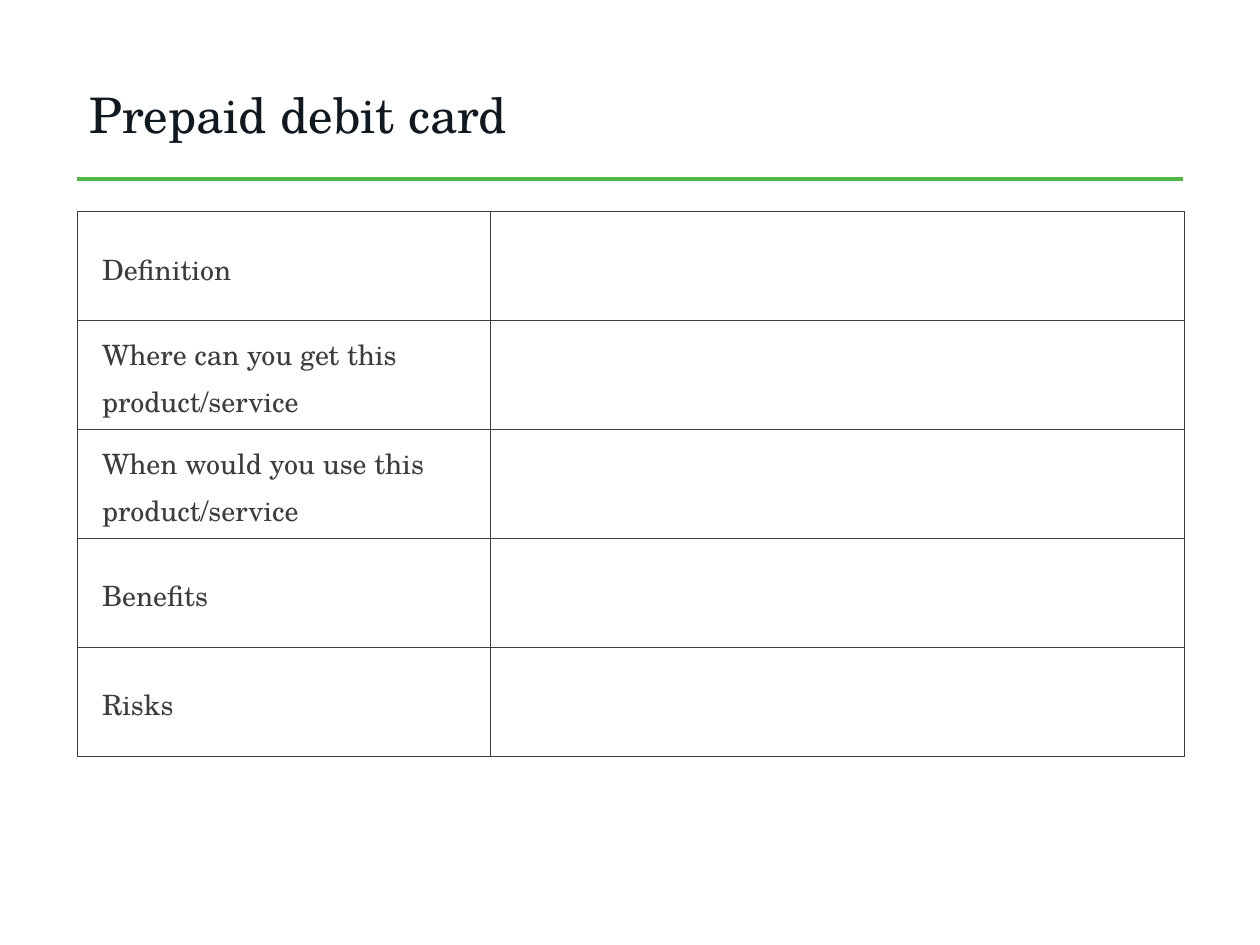
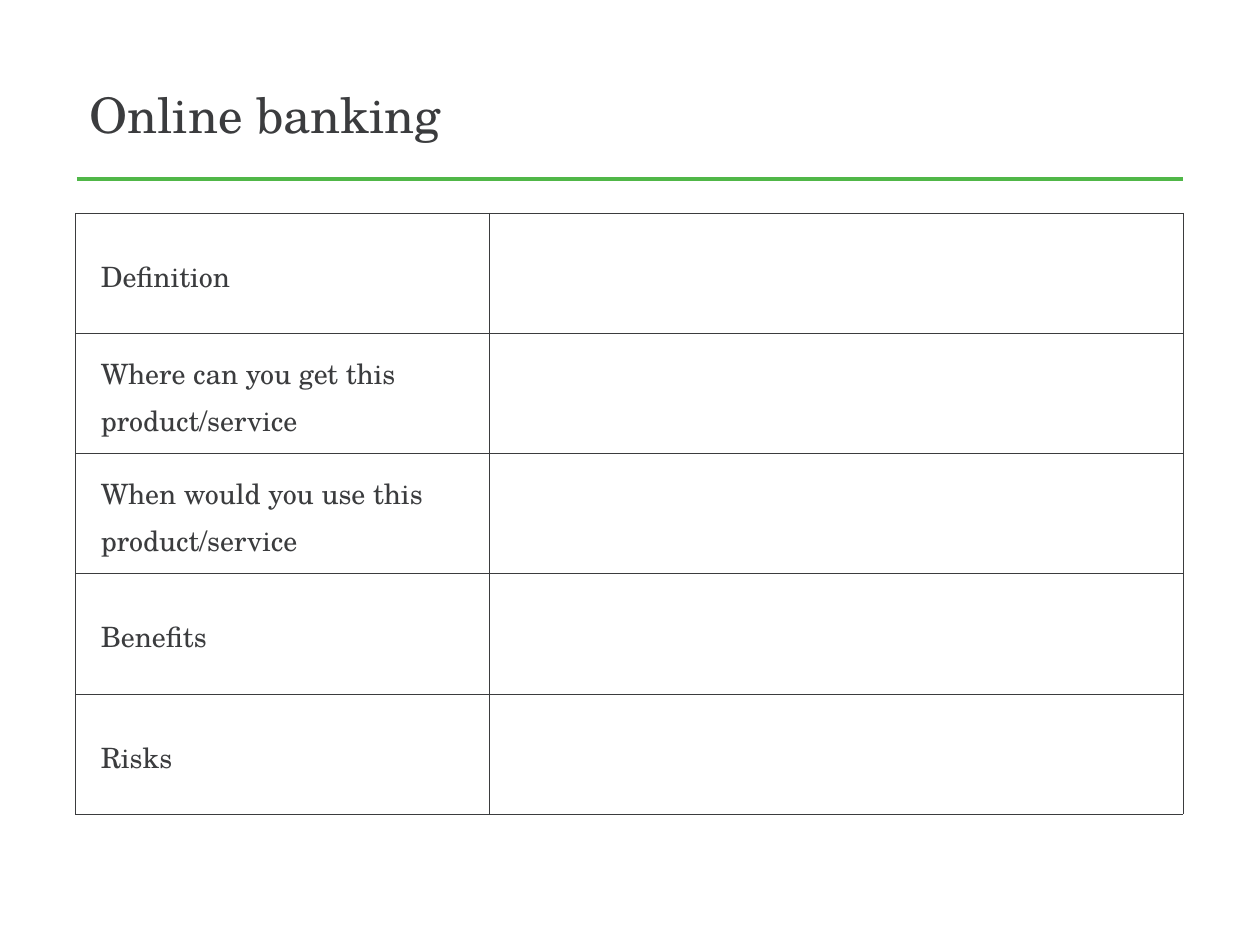
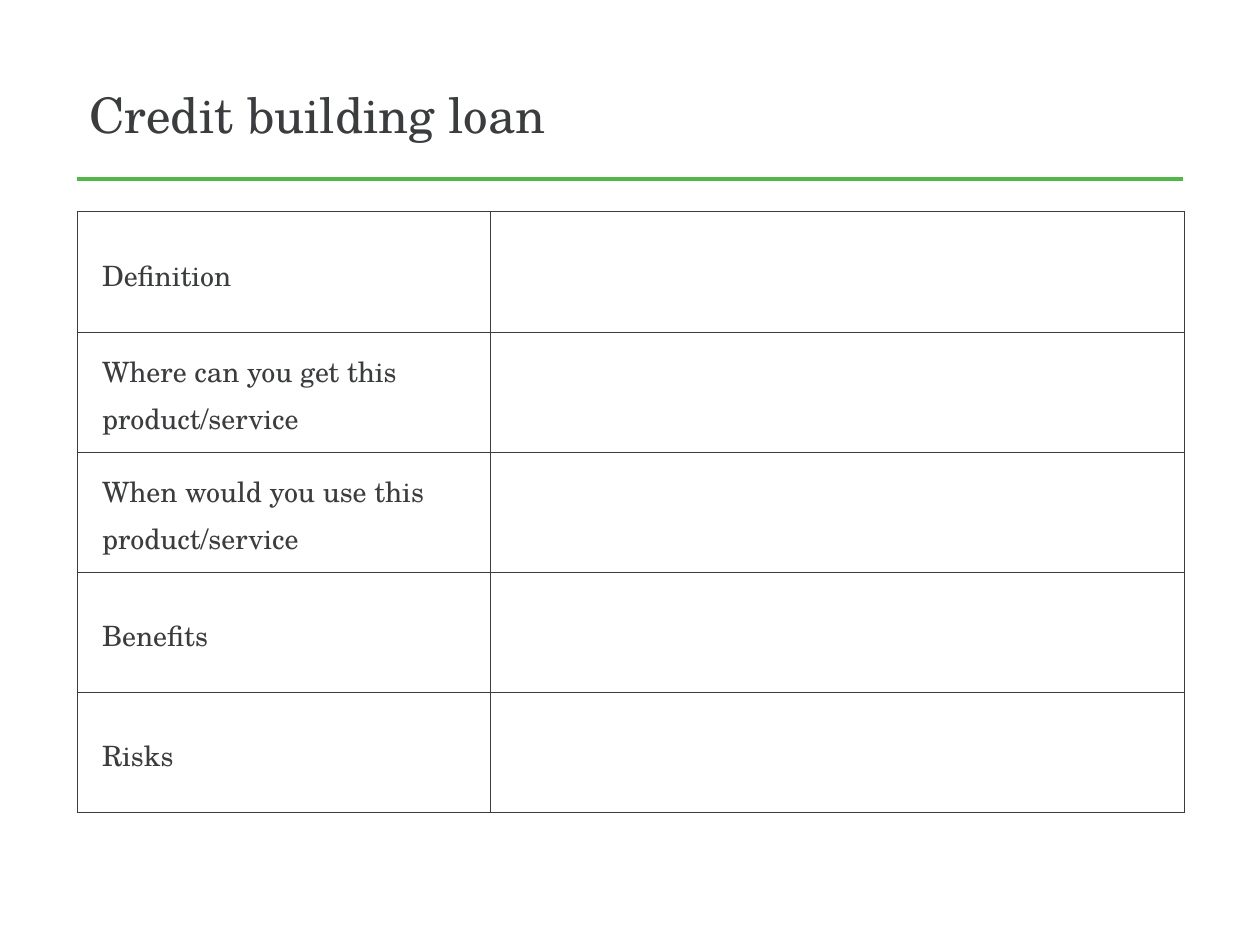
from lxml.etree import SubElement
from pptx import Presentation
from pptx.dml.color import RGBColor
from pptx.enum.shapes import MSO_CONNECTOR
from pptx.enum.text import MSO_ANCHOR, MSO_AUTO_SIZE, PP_ALIGN
from pptx.oxml.ns import qn
from pptx.util import Inches, Pt

COLORS = {"ink": "3B3C3E", "navy": "101820", "green": "50B748"}
FONT = "TeX Gyre Schola"
LEFT, WIDTH = 0.61, 8.79
COLUMN_WIDTHS = (3.28, 5.51)
QUESTIONS = (
    "Definition",
    "Where can you get this product/service",
    "When would you use this product/service",
    "Benefits",
    "Risks",
)
PRODUCTS = (
    {"title": "Prepaid debit card", "title_color": "navy", "left": LEFT, "top": 1.68, "height": 4.32},
    {"title": "Online banking", "title_color": "ink", "left": 0.6, "top": 1.69, "height": 4.77},
    {"title": "Credit building loan", "title_color": "ink", "left": LEFT, "top": 1.68, "height": 4.77},
)
TITLE_BOX = {
    "left": Inches(LEFT),
    "top": Inches(0.5),
    "width": Inches(WIDTH),
    "height": Inches(0.81),
}
TITLE_FRAME = {
    "vertical_anchor": MSO_ANCHOR.MIDDLE,
    "auto_size": MSO_AUTO_SIZE.NONE,
    "word_wrap": True,
}
CELL_FORMAT = {
    "vertical_anchor": MSO_ANCHOR.MIDDLE,
    "margin_left": Inches(0.2),
    "margin_right": Inches(0.1),
    "margin_top": Inches(0.05),
    "margin_bottom": Inches(0.05),
}


def apply(target, values):
    for name, value in values.items():
        setattr(target, name, value)


class WorksheetDeck:
    def __init__(self):
        self.presentation = Presentation()
        apply(self.presentation, {"slide_width": Inches(10), "slide_height": Inches(7.5)})
        self.slide = None

    def add_slide(self):
        self.slide = self.presentation.slides.add_slide(self.presentation.slide_layouts[5])

    def style_text(self, paragraph, size, color):
        apply(paragraph.font, {"name": FONT, "size": Pt(size), "bold": False})
        paragraph.font.color.rgb = RGBColor.from_string(COLORS[color])

    def add_title(self, text, color):
        title = self.slide.shapes.title
        apply(title, TITLE_BOX)
        apply(title.text_frame, TITLE_FRAME)
        title.text_frame.text = text
        paragraph = title.text_frame.paragraphs[0]
        paragraph.alignment = PP_ALIGN.LEFT
        self.style_text(paragraph, 28, color)

    def add_rule(self):
        rule = self.slide.shapes.add_connector(
            MSO_CONNECTOR.STRAIGHT, Inches(LEFT), Inches(1.42), Inches(9.39), Inches(1.42)
        )
        rule.line.width = Pt(2)
        rule.line.color.rgb = RGBColor.from_string(COLORS["green"])
        SubElement(rule._element.spPr, qn("a:effectLst"))

    def add_borders(self, cell):
        properties = cell._tc.get_or_add_tcPr()
        for side in ("lnL", "lnR", "lnT", "lnB"):
            line = SubElement(properties, qn(f"a:{side}"), w=str(Pt(0.25)))
            fill = SubElement(line, qn("a:solidFill"))
            SubElement(fill, qn("a:srgbClr"), val=COLORS["ink"])

    def add_question_table(self, left, top, height):
        table = self.slide.shapes.add_table(
            len(QUESTIONS), len(COLUMN_WIDTHS),
            Inches(left), Inches(top), Inches(WIDTH), Inches(height),
        ).table
        apply(table, {"first_row": False, "horz_banding": False})
        for column, width in zip(table.columns, COLUMN_WIDTHS):
            column.width = Inches(width)
        for cell in table.iter_cells():
            self.add_borders(cell)
            cell.fill.background()
            apply(cell, CELL_FORMAT)
        for row, question in zip(table.rows, QUESTIONS):
            cell = row.cells[0]
            cell.text = question
            paragraph = cell.text_frame.paragraphs[0]
            paragraph.line_spacing = 1.15
            self.style_text(paragraph, 16, "ink")


def main():
    deck = WorksheetDeck()
    for product in PRODUCTS:
        deck.add_slide()
        deck.add_rule()
        deck.add_title(product["title"], product["title_color"])
        deck.add_question_table(product["left"], product["top"], product["height"])
    deck.presentation.save("out.pptx")


if __name__ == "__main__":
    main()
